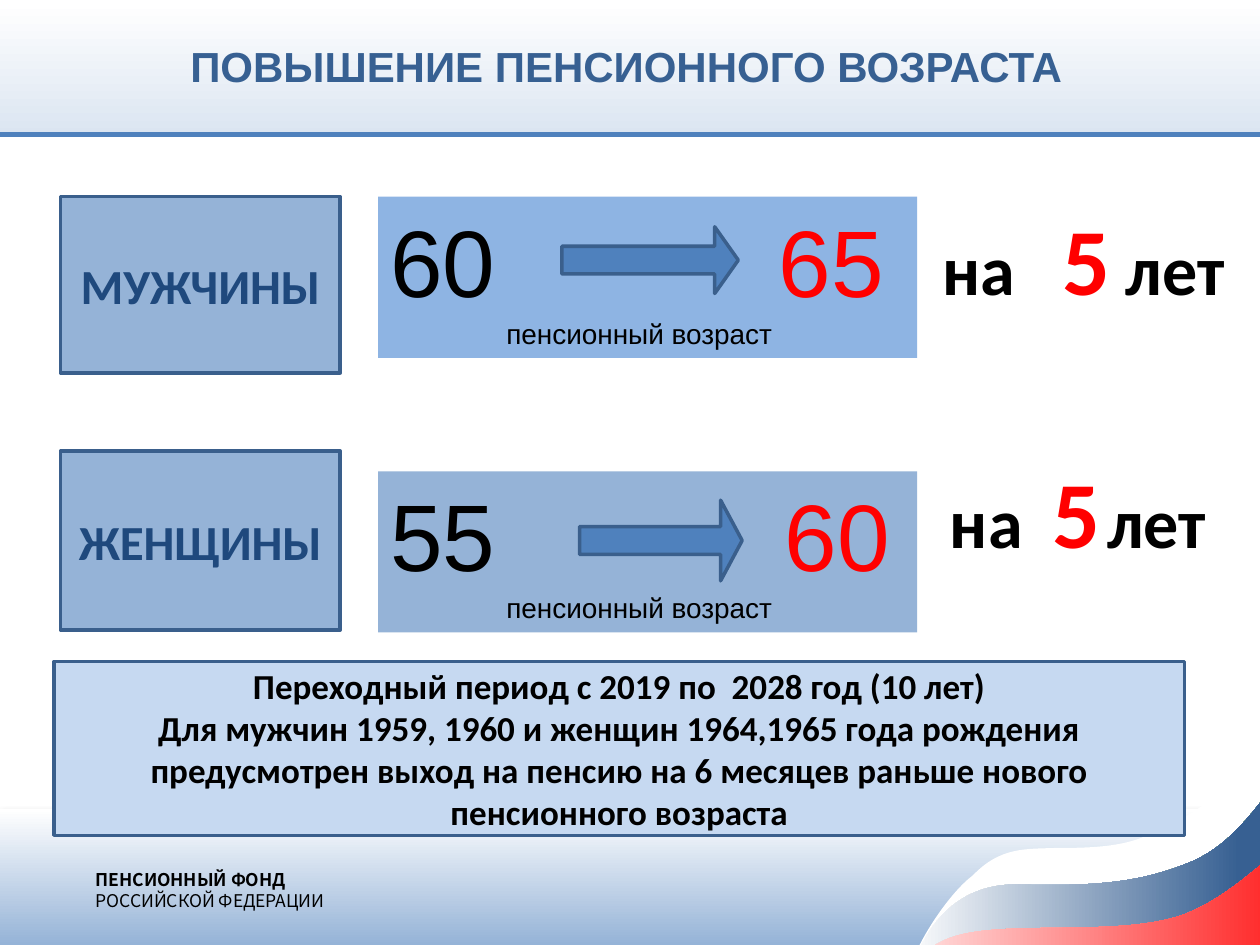
from lxml import etree
from pptx import Presentation
from pptx.dml.color import RGBColor
from pptx.enum.shapes import MSO_CONNECTOR, MSO_SHAPE
from pptx.enum.text import MSO_ANCHOR, PP_ALIGN
from pptx.oxml.ns import qn
from pptx.util import Inches, Pt

RECT, ARROW = MSO_SHAPE.RECTANGLE, MSO_SHAPE.RIGHT_ARROW
STRAIGHT = MSO_CONNECTOR.STRAIGHT
LEFT, CENTER = PP_ALIGN.LEFT, PP_ALIGN.CENTER
TOP, MIDDLE = MSO_ANCHOR.TOP, MSO_ANCHOR.MIDDLE
BLACK, WHITE, RED = "000000", "FFFFFF", "FF0000"
BLUE, EDGE, STEEL, NAVY = "4F81BD", "3A5F8C", "95B3D7", "376092"
DOWN, ACROSS = 270, 0

# Ribbons of the corner wave: start point, then two controls and an end per curve
WHITE_RIBBON = [
    (7.24, 7.75),
    (7.16, 7.67), (7.49, 7.12), (7.72, 6.95), (7.94, 6.72), (8.14, 6.74), (8.38, 6.73),
    (8.62, 6.73), (8.95, 6.73), (9.16, 6.6), (9.36, 6.55), (9.73, 6.26), (9.9, 6.14),
    (10.07, 6.01), (10.09, 5.99), (10.17, 5.86), (10.26, 5.73), (10.38, 5.23), (10.42, 5.37),
    (10.46, 5.51), (10.56, 6.43), (10.41, 6.69), (10.27, 6.95), (9.96, 6.87), (9.55, 6.95),
    (9.14, 7.03), (8.58, 7.29), (8.19, 7.43), (7.8, 7.56), (7.32, 7.83), (7.24, 7.75)]
BLUE_RIBBON = [
    (7.22, 7.73),
    (7.26, 7.64), (7.41, 7), (8.1, 7.02), (8.79, 7.04), (9.1, 6.98), (9.43, 6.85),
    (9.76, 6.72), (9.96, 6.42), (10.11, 6.23), (10.26, 6.05), (10.32, 5.6), (10.36, 5.74),
    (10.4, 5.88), (10.5, 6.8), (10.35, 7.06), (10.21, 7.32), (9.9, 7.24), (9.48, 7.32),
    (9.07, 7.4), (8.25, 7.47), (7.87, 7.54), (7.49, 7.61), (7.18, 7.81), (7.22, 7.73)]
RED_RIBBON = [
    (6.93, 8.15),
    (7.19, 7.97), (7.1, 7.64), (7.5, 7.46), (7.89, 7.28), (8.86, 7.45), (9.39, 7.26),
    (9.91, 7.07), (10.41, 6.43), (10.66, 6.32), (10.91, 6.2), (10.9, 6.35), (10.89, 6.58),
    (10.88, 6.81), (11.07, 7.45), (10.59, 7.69), (10.11, 7.93), (8.64, 7.95), (8.03, 8.03),
    (7.42, 8.11), (6.76, 8.28), (6.93, 8.15)]


def rgb(value):
    return RGBColor.from_string(value)


def paint(shape, fill, line=None):
    shape.shadow.inherit = False
    shape.fill.solid()
    shape.fill.fore_color.rgb = rgb(fill)
    if line:
        shape.line.color.rgb = rgb(line)
        shape.line.width = Pt(2)
    else:
        shape.line.fill.background()


def paint_gradient(shape, end, angle, stop=1.0):
    paint(shape, WHITE)
    shape.fill.gradient()
    shape.fill.gradient_angle = angle
    for mark, colour, position in zip(shape.fill.gradient_stops, (WHITE, end), (0, stop)):
        mark.color.rgb = rgb(colour)
        mark.position = position


def add_shadow(shape):
    effects = shape._element.spPr.find(qn("a:effectLst"))
    shadow = etree.SubElement(effects, qn("a:outerShdw"), blurRad=str(Pt(3.1)),
                              dist=str(Pt(1.8)), dir="5400000", rotWithShape="0")
    colour = etree.SubElement(shadow, qn("a:srgbClr"), val="808080")
    etree.SubElement(colour, qn("a:alpha"), val="35000")


def add_box(slide, box, fill, line=None, kind=RECT):
    shape = slide.shapes.add_shape(kind, *map(Inches, box))
    paint(shape, fill, line)
    return shape


def set_font(font, name, size, colour, bold=False):
    font.name, font.size, font.bold = name, Pt(size), bold
    font.color.rgb = rgb(colour)


def set_tab(paragraph, position):
    tabs = etree.SubElement(paragraph._p.get_or_add_pPr(), qn("a:tabLst"))
    etree.SubElement(tabs, qn("a:tab"), pos=str(Inches(position)), algn="l")


def write(shape, lines, name, size, colour, bold=False, align=CENTER, anchor=MIDDLE):
    frame = shape.text_frame
    frame.word_wrap, frame.vertical_anchor = True, anchor
    for index, line in enumerate(lines):
        paragraph = frame.add_paragraph() if index else frame.paragraphs[0]
        paragraph.text, paragraph.alignment = line, align
        set_font(paragraph.font, name, size, colour, bold)


def add_ribbon(slide, outline):
    points = [(Inches(x), Inches(y)) for x, y in outline]
    builder = slide.shapes.build_freeform(*points[0])
    builder.add_line_segments(points[1:], close=True)
    ribbon = builder.convert_to_shape()
    # Join each three points into one cubic curve
    corners = list(ribbon._element.iter(qn("a:lnTo")))
    for first in range(0, len(points) - 1, 3):
        curve = etree.Element(qn("a:cubicBezTo"))
        corners[first].addprevious(curve)
        for corner in corners[first:first + 3]:
            curve.append(corner[0])
            corner.getparent().remove(corner)
    paint(ribbon, WHITE)
    return ribbon


def add_footer(slide, box):
    left, top, width, height = box
    band = add_box(slide, box, WHITE)
    paint_gradient(band, STEEL, DOWN)
    add_shadow(band)

    # Corner wave
    add_ribbon(slide, WHITE_RIBBON)
    paint_gradient(add_ribbon(slide, BLUE_RIBBON), NAVY, ACROSS, 0.8)
    paint_gradient(add_ribbon(slide, RED_RIBBON), RED, ACROSS, 0.92)

    # Name of the fund
    fund = slide.shapes.add_textbox(Inches(left + 0.76), Inches(top + 0.48),
                                    Inches(1.89), Inches(0.34))
    frame = fund.text_frame
    frame.margin_left = frame.margin_top = frame.margin_right = frame.margin_bottom = 0
    write(fund, ["ПЕНСИОННЫЙ ФОНД", "РОССИЙСКОЙ ФЕДЕРАЦИИ"],
          "Noto Sans CJK KR", 10, BLACK, align=LEFT, anchor=TOP)
    frame.paragraphs[0].font.bold = True


def add_header(slide, box, text):
    left, top, width, height = box
    paint_gradient(add_box(slide, box, WHITE), "DBE5F1", DOWN)
    bottom = Inches(1.07)
    rule = slide.shapes.add_connector(STRAIGHT, Inches(left), bottom,
                                      Inches(left + width), bottom)
    rule.line.color.rgb, rule.line.width = rgb(BLUE), Pt(3)
    etree.SubElement(rule._element.spPr, qn("a:effectLst"))

    title = slide.shapes.title
    title.left, title.top = Inches(left - 0.03), Inches(top + 0.26)
    title.width, title.height = Inches(width), Inches(0.5)
    write(title, [text], "Arial", 24, NAVY, bold=True, anchor=TOP)
    slide.shapes._spTree.append(title._element)  # in front of the band


def add_group(slide, box, name):
    write(add_box(slide, box, STEEL, EDGE), [name], "Calibri", 28, "1F497D", bold=True)


def add_ages(slide, box, fill, before, after, tab):
    panel = add_box(slide, box, fill)
    ages, caption = panel.text_frame.paragraphs[0], panel.text_frame.add_paragraph()
    panel.text_frame.vertical_anchor, panel.text_frame.word_wrap = TOP, True
    ages.alignment = caption.alignment = LEFT
    set_tab(ages, tab)
    set_font(ages.font, "Arial", 54, BLACK)
    ages.add_run().text = before + "\t"
    new_age = ages.add_run()
    new_age.text = after
    new_age.font.color.rgb = rgb(RED)
    caption.text = "пенсионный возраст"
    caption._p.get_or_add_pPr().set("marL", str(Inches(0.92)))
    set_font(caption.font, "Arial", 16, BLACK)


def add_arrow(slide, box, adjustments):
    arrow = add_box(slide, box, BLUE, EDGE, ARROW)
    arrow.adjustments[0], arrow.adjustments[1] = adjustments


def add_increase(slide, box, margin, tab, space_size):
    increase = add_box(slide, box, WHITE, WHITE)
    frame = increase.text_frame
    frame.word_wrap, frame.vertical_anchor = True, MIDDLE
    frame.margin_left, frame.margin_right = Inches(margin), 0
    paragraph = frame.paragraphs[0]
    paragraph.alignment = LEFT
    set_tab(paragraph, tab)
    parts = [("на\t", 40, BLACK), ("5", 54, RED), (" ", space_size, BLACK), ("лет", 40, BLACK)]
    for text, size, colour in parts:
        run = paragraph.add_run()
        run.text = text
        set_font(run.font, "Calibri", size, colour, bold=True)


def main():
    prs = Presentation()
    prs.slide_width, prs.slide_height = Inches(10), Inches(7.5)
    slide = prs.slides.add_slide(prs.slide_layouts[5])

    add_footer(slide, (0, 6.42, 10, 1.08))
    add_header(slide, (0, 0.01, 10, 1.07), "ПОВЫШЕНИЕ ПЕНСИОННОГО ВОЗРАСТА")

    # Years added: women, men
    add_increase(slide, (7.28, 3.38, 2.56, 1.34), 0.26, 0.81, 18)
    add_increase(slide, (7.37, 1.39, 2.47, 1.31), 0.11, 0.95, 40)

    # Old and new ages: men, women
    add_ages(slide, (3, 1.56, 4.28, 1.28), "8EB4E3", "60", "65", 3.08)
    add_ages(slide, (3, 3.74, 4.28, 1.28), STEEL, "55", "60", 3.13)
    add_arrow(slide, (4.46, 1.8, 1.4, 0.53), (0.416, 0.353))
    add_arrow(slide, (4.6, 3.97, 1.29, 0.64), (0.345, 0.267))

    # Groups
    add_group(slide, (0.48, 1.56, 2.22, 1.4), "МУЖЧИНЫ")
    add_group(slide, (0.48, 3.58, 2.22, 1.42), "ЖЕНЩИНЫ")

    # Transition period
    write(add_box(slide, (0.43, 5.25, 8.97, 1.38), "C6D9F1", EDGE),
          ["Переходный период с 2019 по  2028 год (10 лет)",
           "Для мужчин 1959, 1960 и женщин 1964,1965 года рождения предусмотрен "
           "выход на пенсию на 6 месяцев раньше нового пенсионного возраста"],
          "Calibri", 20, BLACK, bold=True)
    prs.save("out.pptx")


if __name__ == "__main__":
    main()
